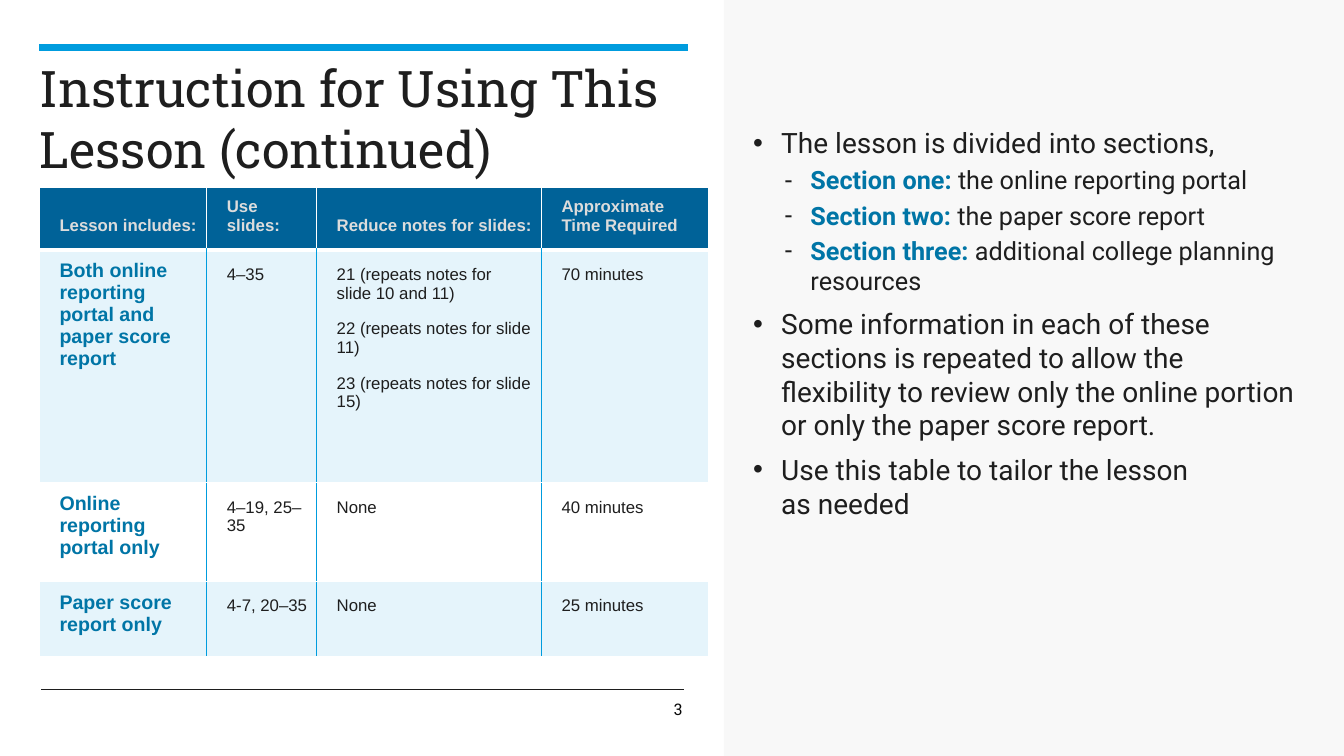
from dataclasses import dataclass

from lxml import etree
from pptx import Presentation
from pptx.dml.color import RGBColor
from pptx.enum.shapes import MSO_CONNECTOR, MSO_SHAPE
from pptx.enum.text import MSO_ANCHOR, PP_ALIGN
from pptx.oxml.ns import qn
from pptx.util import Inches, Pt

STRAIGHT = MSO_CONNECTOR.STRAIGHT
RECTANGLE = MSO_SHAPE.RECTANGLE
TOP, MIDDLE, BOTTOM = MSO_ANCHOR.TOP, MSO_ANCHOR.MIDDLE, MSO_ANCHOR.BOTTOM
RIGHT = PP_ALIGN.RIGHT


@dataclass(frozen=True)
class Theme:
    ink: str = "1E1E1E"
    number: str = "080808"
    accent: str = "009CDE"
    emphasis: str = "0075A6"
    header: str = "006298"
    header_text: str = "DCDCDC"
    panel: str = "F8F8F8"
    white: str = "FFFFFF"
    title_font: str = "Roboto Slab"
    body_font: str = "Roboto"
    table_font: str = "Arial"
    title_size: float = 36
    body_size: float = 20
    section_size: float = 18
    row_label_size: float = 14
    cell_size: float = 12
    number_size: float = 11.4
    tint_percent: int = 10


THEME = Theme()

COLUMN_WIDTHS = (1.66, 1.09, 2.23, 1.66)
ROW_HEIGHTS = (0.62, 2.31, 0.98, 0.74)
LESSON_ROWS = (
    ("Lesson includes:", "Use slides:", "Reduce notes for slides:", "Approximate\vTime Required"),
    ("Both online reporting portal and paper score report", "4–35",
     "21 (repeats notes for\vslide 10 and 11)\n22 (repeats notes for slide 11)\n"
     "23 (repeats notes for slide 15)", "70 minutes"),
    ("Online reporting portal only", "4–19, 25–35", "None", "40 minutes"),
    ("Paper score\vreport only", "4-7, 20–35", "None", "25 minutes"),
)

# Each entry: bold section label (empty for a main point), text
LESSON_NOTES = (
    ("", "The lesson is divided into sections,"),
    ("Section one: ", "the online reporting portal"),
    ("Section two: ", "the paper score report"),
    ("Section three: ", "additional college planning resources"),
    ("", "Some information in each of these sections is repeated to allow the "
         "flexibility to review only the online portion or only the paper score report."),
    ("", "Use this table to tailor the lesson\vas needed"),
)


def style_font(font, name, size, color, bold=False):
    font.name = name
    font.size = Pt(size)
    font.bold = bold
    font.color.rgb = RGBColor.from_string(color)


def set_margins(target, left, top, right, bottom):
    target.margin_left, target.margin_top = Inches(left), Inches(top)
    target.margin_right, target.margin_bottom = Inches(right), Inches(bottom)


def add_rule(slide, left, right, y, color, width):
    rule = slide.shapes.add_connector(STRAIGHT, Inches(left), Inches(y), Inches(right), Inches(y))
    rule.line.color.rgb = RGBColor.from_string(color)
    rule.line.width = Pt(width)
    etree.SubElement(rule._element.spPr, qn("a:effectLst"))


def add_panel(slide, left, top, width, height):
    panel = slide.shapes.add_shape(RECTANGLE, Inches(left), Inches(top), Inches(width), Inches(height))
    panel.shadow.inherit = False
    panel.fill.solid()
    panel.fill.fore_color.rgb = RGBColor.from_string(THEME.panel)
    panel.line.fill.background()


def add_text_frame(slide, left, top, width, height, wrap=True):
    box = slide.shapes.add_textbox(Inches(left), Inches(top), Inches(width), Inches(height))
    box.text_frame.word_wrap = wrap
    return box.text_frame


def add_title(slide, text):
    frame = add_text_frame(slide, 0.39, 0.57, 6.41, 0.45)
    set_margins(frame, 0, 0, 0.08, 0)
    frame.text = text
    style_font(frame.paragraphs[0].runs[0].font, THEME.title_font, THEME.title_size, THEME.ink)


def add_slide_number(slide, text):
    frame = add_text_frame(slide, 6.26, 6.96, 0.51, 0.16, wrap=False)
    set_margins(frame, 0, 0, 0, 0)
    frame.vertical_anchor = MIDDLE
    frame.text = text
    paragraph = frame.paragraphs[0]
    paragraph.alignment = RIGHT
    style_font(paragraph.runs[0].font, THEME.title_font, THEME.number_size, THEME.number)


def set_bullet(paragraph, character, left, hanging):
    properties = paragraph._p.get_or_add_pPr()
    properties.set("marL", str(Inches(left)))
    properties.set("indent", str(-Inches(hanging)))
    color = etree.SubElement(properties, qn("a:buClr"))
    etree.SubElement(color, qn("a:srgbClr"), val=THEME.ink)
    etree.SubElement(properties, qn("a:buFont"), typeface=THEME.table_font)
    etree.SubElement(properties, qn("a:buChar"), char=character)


def add_notes_list(slide, notes):
    frame = add_text_frame(slide, 7.37, 1.2, 5.58, 5.1)
    for index, (label, text) in enumerate(notes):
        paragraph = frame.paragraphs[0] if index == 0 else frame.add_paragraph()
        if label:
            paragraph.level = 1
            set_bullet(paragraph, "-", 0.57, 0.26)
            size, gap = THEME.section_size, 3.6
            label_run = paragraph.add_run()
            label_run.text = label
            style_font(label_run.font, THEME.body_font, size, THEME.emphasis, bold=True)
        else:
            set_bullet(paragraph, "•", 0.28, 0.28)
            size, gap = THEME.body_size, 8
        if index:
            paragraph.space_before = Pt(gap)
        for position, part in enumerate(text.split("\v")):
            if position:
                paragraph.add_line_break()
            run = paragraph.add_run()
            run.text = part
            style_font(run.font, THEME.body_font, size, THEME.ink)


def set_border(cell, side, color, width):
    line = etree.SubElement(cell._tc.get_or_add_tcPr(), qn("a:" + side), w=str(Pt(width)))
    fill = etree.SubElement(line, qn("a:solidFill"))
    etree.SubElement(fill, qn("a:srgbClr"), val=color)


def set_cell_borders(cell, row, column):
    white, divider = (THEME.white, 1), (THEME.accent, 0.5)
    heavy = (THEME.white, 3)
    last = len(COLUMN_WIDTHS) - 1
    set_border(cell, "lnL", *(divider if row and column else white))
    set_border(cell, "lnR", *(divider if row and column < last else white))
    set_border(cell, "lnT", *(heavy if row == 1 else white))
    set_border(cell, "lnB", *(heavy if row == 0 else white))


def fill_cell(cell, row):
    if row == 2:
        cell.fill.background()
        return
    cell.fill.solid()
    cell.fill.fore_color.rgb = RGBColor.from_string(THEME.accent if row else THEME.header)
    if row:
        color = cell._tc.tcPr.find(qn("a:solidFill")).find(qn("a:srgbClr"))
        etree.SubElement(color, qn("a:alpha"), val=str(THEME.tint_percent * 1000))


def write_cell(cell, row, column, text):
    if row == 0:
        margins, size, color, bold = (0, 0.15), THEME.cell_size, THEME.header_text, True
    elif column == 0:
        margins, size, color, bold = (0.1, 0), THEME.row_label_size, THEME.emphasis, True
    else:
        margins, size, color, bold = (0.15, 0), THEME.cell_size, THEME.ink, False
    set_margins(cell, 0.2, margins[0], 0.07, margins[1])
    cell.vertical_anchor = TOP if row else BOTTOM
    cell.text_frame.text = text
    for index, paragraph in enumerate(cell.text_frame.paragraphs):
        if index:
            paragraph.space_before = Pt(12)
        for run in paragraph.runs:
            style_font(run.font, THEME.table_font, size, color, bold)


def add_lesson_table(slide, rows):
    frame = slide.shapes.add_table(len(rows), len(COLUMN_WIDTHS), Inches(0.39), Inches(1.86),
                                   Inches(sum(COLUMN_WIDTHS)), Inches(sum(ROW_HEIGHTS)))
    table = frame.table
    table.horz_banding = False
    for column, width in zip(table.columns, COLUMN_WIDTHS):
        column.width = Inches(width)
    for row, height in zip(table.rows, ROW_HEIGHTS):
        row.height = Inches(height)
    for row, texts in enumerate(rows):
        for column, text in enumerate(texts):
            cell = table.cell(row, column)
            write_cell(cell, row, column, text)
            set_cell_borders(cell, row, column)
            fill_cell(cell, row)


def main():
    presentation = Presentation()
    presentation.slide_width, presentation.slide_height = Inches(13.33), Inches(7.5)
    slide = presentation.slides.add_slide(presentation.slide_layouts[6])

    # Page frame
    add_rule(slide, 0.39, 6.82, 0.47, THEME.accent, 5.25)
    add_panel(slide, 7.18, 0, 6.15, 7.5)
    add_slide_number(slide, "3")
    add_rule(slide, 0.41, 6.78, 6.84, THEME.ink, 0.25)

    # Content
    add_title(slide, "Instruction for Using This Lesson (continued)")
    add_notes_list(slide, LESSON_NOTES)
    add_lesson_table(slide, LESSON_ROWS)

    presentation.save("out.pptx")


if __name__ == "__main__":
    main()
